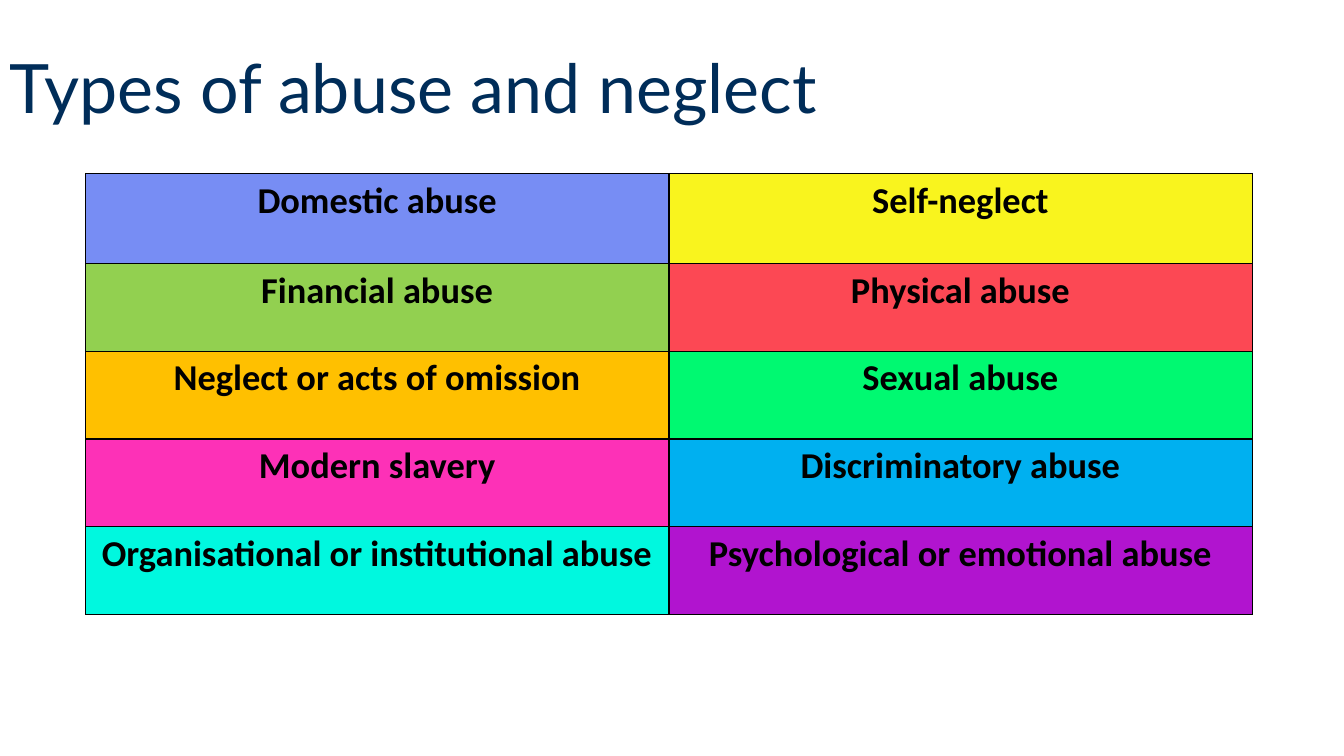
from dataclasses import dataclass

from lxml import etree
from pptx import Presentation
from pptx.dml.color import RGBColor
from pptx.enum import text
from pptx.oxml import ns
from pptx.util import Inches, Pt


@dataclass(frozen=True)
class Theme:
    title_font: str = "Lato"
    title_size: float = 48.6
    title_color: str = "002D59"
    cell_font: str = "Calibri"
    cell_size: float = 26
    cell_color: str = "000000"
    border_color: str = "000000"
    border_width: float = 1


THEME = Theme()

# Each row holds two (label, fill) pairs
ABUSE_TYPES = [
    [("Domestic abuse", "778DF4"), ("Self-neglect", "F9F41E")],
    [("Financial abuse", "92D050"), ("Physical abuse", "FC4854")],
    [("Neglect or acts of omission", "FFC000"), ("Sexual abuse", "00F971")],
    [("Modern slavery", "FD31B7"), ("Discriminatory abuse", "00B0F0")],
    [("Organisational or institutional abuse", "00F8DF"),
     ("Psychological or emotional abuse", "B114CF")],
]
FIRST_ROW_EXTRA = 0.02


def add_span(para, words, font, size, color, bold=False):
    span = para.add_run()
    span.text = words
    span.font.name = font
    span.font.size = Pt(size)
    span.font.bold = bold
    span.font.color.rgb = RGBColor.from_string(color)


def add_title(page, words, left, top, width, height):
    box = page.shapes.add_textbox(*map(Inches, (left, top, width, height)))
    frame = box.text_frame
    frame.word_wrap = True
    frame.vertical_anchor = text.MSO_ANCHOR.MIDDLE
    para = frame.paragraphs[0]
    para.line_spacing = 0.9
    add_span(para, words, THEME.title_font, THEME.title_size, THEME.title_color)


def add_borders(cell):
    """Draw all four edges; they must precede the cell's fill in the XML."""
    properties = cell._tc.get_or_add_tcPr()
    for position, edge in enumerate(("lnL", "lnR", "lnT", "lnB")):
        line = etree.Element(ns.qn(f"a:{edge}"), w=str(Pt(THEME.border_width)))
        fill = etree.SubElement(line, ns.qn("a:solidFill"))
        etree.SubElement(fill, ns.qn("a:srgbClr"), val=THEME.border_color)
        properties.insert(position, line)


def add_type_grid(page, rows, left, top, width, height):
    columns = len(rows[0])
    frame = page.shapes.add_table(
        len(rows), columns, *map(Inches, (left, top, width, height)))
    table = frame.table
    table.first_row = table.horz_banding = False

    # Equal columns, and equal rows after a slightly taller first one
    for column in table.columns:
        column.width = Inches(width / columns)
    row_height = (height - FIRST_ROW_EXTRA) / len(rows)
    for row in table.rows:
        row.height = Inches(row_height)
    table.rows[0].height = Inches(row_height + FIRST_ROW_EXTRA)

    for row_index, row in enumerate(rows):
        for column_index, (label, color) in enumerate(row):
            cell = table.cell(row_index, column_index)
            cell.fill.solid()
            cell.fill.fore_color.rgb = RGBColor.from_string(color)
            add_borders(cell)
            para = cell.text_frame.paragraphs[0]
            para.alignment = text.PP_ALIGN.CENTER
            add_span(para, label, THEME.cell_font, THEME.cell_size,
                     THEME.cell_color, bold=True)


def main():
    deck = Presentation()
    deck.slide_width, deck.slide_height = Inches(13.33), Inches(7.5)
    page = deck.slides.add_slide(deck.slide_layouts[6])
    add_title(page, "Types of abuse and neglect", 0, 0.47, 12.42, 0.87)
    add_type_grid(page, ABUSE_TYPES, 0.85, 1.72, 11.57, 4.38)
    deck.save("out.pptx")


if __name__ == "__main__":
    main()
